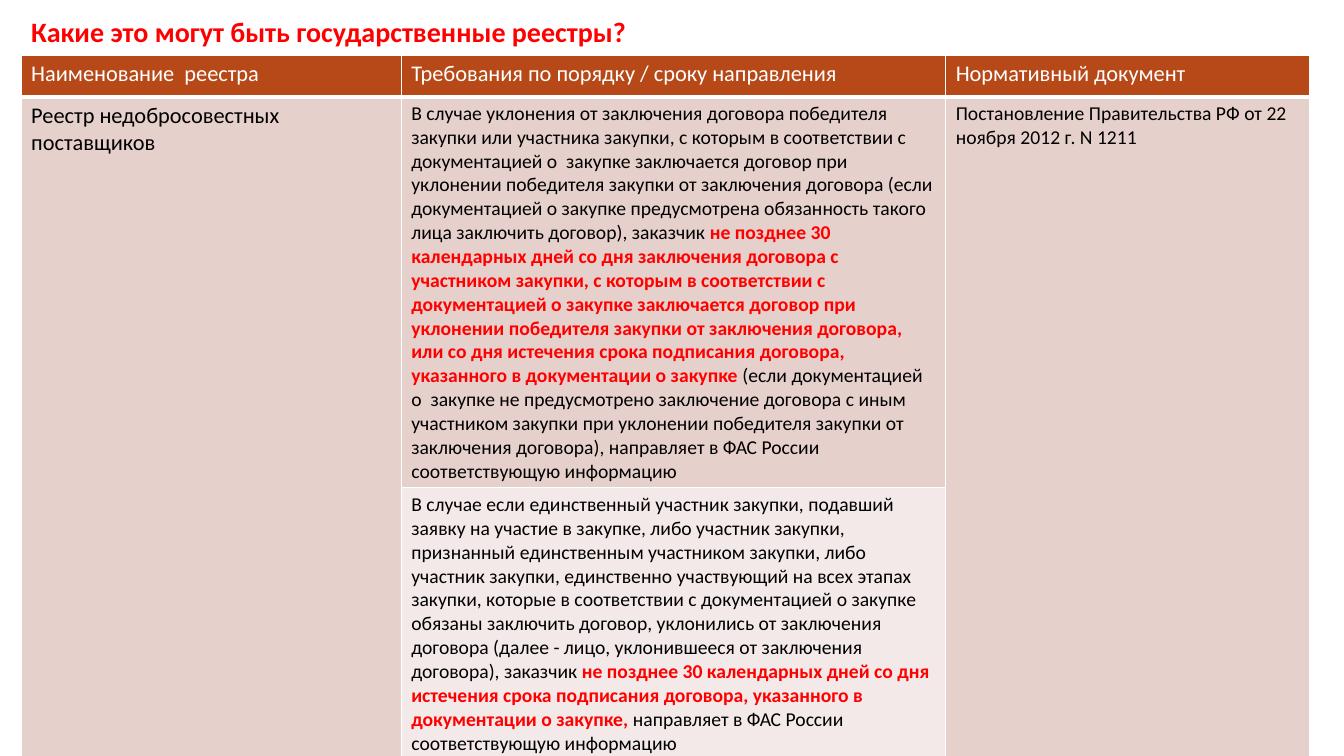
from pptx import Presentation
from pptx import util as u
from pptx.dml.color import RGBColor
from pptx.enum import text
from pptx.oxml import parse_xml
from pptx.oxml.ns import nsdecls

Inches, Pt = u.Inches, u.Pt
FONT = "Calibri"
COLORS = {
    "accent": "FF0000",
    "header": "B74919",
    "band": "E6D0CC",
    "light_band": "F3E9E8",
    "white": "FFFFFF",
    "black": "000000",
}

TITLE = "Какие это могут быть государственные реестры?"
HEADERS = ["Наименование  реестра", "Требования по порядку / сроку направления",
           "Нормативный документ"]
REGISTRY = "Реестр недобросовестных поставщиков"
DECREE = "Постановление Правительства РФ от 22 ноября 2012 г. N 1211"
# Each requirement: plain text, highlighted deadline, plain text
WINNER_EVADES = [
    "В случае уклонения от заключения договора победителя закупки или участника "
    "закупки, с которым в соответствии с документацией о  закупке заключается "
    "договор при уклонении победителя закупки от заключения договора (если "
    "документацией о закупке предусмотрена обязанность такого лица заключить "
    "договор), заказчик ",
    "не позднее 30 календарных дней со дня заключения договора с участником "
    "закупки, с которым в соответствии с документацией о закупке заключается "
    "договор при уклонении победителя закупки от заключения договора, или со дня "
    "истечения срока подписания договора, указанного в документации о закупке ",
    "(если документацией о  закупке не предусмотрено заключение договора с иным "
    "участником закупки при уклонении победителя закупки от заключения договора), "
    "направляет в ФАС России соответствующую информацию",
]
SOLE_BIDDER_EVADES = [
    "В случае если единственный участник закупки, подавший заявку на участие в "
    "закупке, либо участник закупки, признанный единственным участником закупки, "
    "либо участник закупки, единственно участвующий на всех этапах закупки, "
    "которые в соответствии с документацией о закупке обязаны заключить договор, "
    "уклонились от заключения договора (далее - лицо, уклонившееся от заключения "
    "договора), заказчик ",
    "не позднее 30 календарных дней со дня истечения срока подписания договора, "
    "указанного в документации о закупке, ",
    "направляет в ФАС России соответствующую информацию",
]
COLUMN_WIDTHS = [3.77, 5.4, 3.61]
ROW_HEIGHTS = [0.41, 3.88, 2.62]


def color(name):
    return RGBColor.from_string(COLORS[name])


def format_run(run, size, color_name, bold=False):
    run.font.name = FONT
    run.font.size = Pt(size)
    run.font.bold = bold
    run.font.color.rgb = color(color_name)


def fill_cell(cell, parts, size, color_name="black"):
    """Write the parts as runs; every second part is highlighted."""
    paragraph = cell.text_frame.paragraphs[0]
    for index, part in enumerate(parts):
        run = paragraph.add_run()
        run.text = part
        highlighted = index % 2 == 1
        format_run(run, size, "accent" if highlighted else color_name, highlighted)


def style_cell(cell, fill_name, bottom_width=1):
    cell.fill.solid()
    cell.fill.fore_color.rgb = color(fill_name)
    properties = cell._tc.get_or_add_tcPr()
    for index, side in enumerate(["lnL", "lnR", "lnT", "lnB"]):
        width = Pt(bottom_width if side == "lnB" else 1)
        properties.insert(index, parse_xml(
            f'<a:{side} {nsdecls("a")} w="{width}"><a:solidFill>'
            f'<a:srgbClr val="{COLORS["white"]}"/></a:solidFill></a:{side}>'))


def add_title(slide, left, top, width, height):
    box = slide.shapes.add_textbox(Inches(left), Inches(top), Inches(width), Inches(height))
    frame = box.text_frame
    frame.word_wrap = True
    frame.vertical_anchor = text.MSO_ANCHOR.MIDDLE
    frame.text = TITLE
    paragraph = frame.paragraphs[0]
    paragraph.line_spacing = 0.9
    format_run(paragraph.runs[0], 20, "accent", bold=True)


def add_registry_table(slide, left, top):
    table = slide.shapes.add_table(
        len(ROW_HEIGHTS), len(COLUMN_WIDTHS), Inches(left), Inches(top),
        Inches(sum(COLUMN_WIDTHS)), Inches(sum(ROW_HEIGHTS))).table
    for column, width in zip(table.columns, COLUMN_WIDTHS):
        column.width = Inches(width)
    for row, height in zip(table.rows, ROW_HEIGHTS):
        row.height = Inches(height)

    # Header row
    for index, header in enumerate(HEADERS):
        cell = table.cell(0, index)
        fill_cell(cell, [header], 16, "white")
        style_cell(cell, "header", bottom_width=3)

    # Body: outer columns span both requirements
    for row in (1, 2):
        for column in range(len(COLUMN_WIDTHS)):
            light = row == 2 and column == 1
            style_cell(table.cell(row, column), "light_band" if light else "band")
    for column in (0, 2):
        table.cell(1, column).merge(table.cell(2, column))
    fill_cell(table.cell(1, 0), [REGISTRY], 16)
    fill_cell(table.cell(1, 1), WINNER_EVADES, 14)
    fill_cell(table.cell(2, 1), SOLE_BIDDER_EVADES, 14)
    fill_cell(table.cell(1, 2), [DECREE], 14)


def main():
    presentation = Presentation()
    presentation.slide_width = Inches(13.33)
    presentation.slide_height = Inches(7.5)
    slide = presentation.slides.add_slide(presentation.slide_layouts[6])
    add_title(slide, 0.21, 0.1, 12.95, 0.46)
    add_registry_table(slide, 0.21, 0.55)
    presentation.save("out.pptx")


if __name__ == "__main__":
    main()
